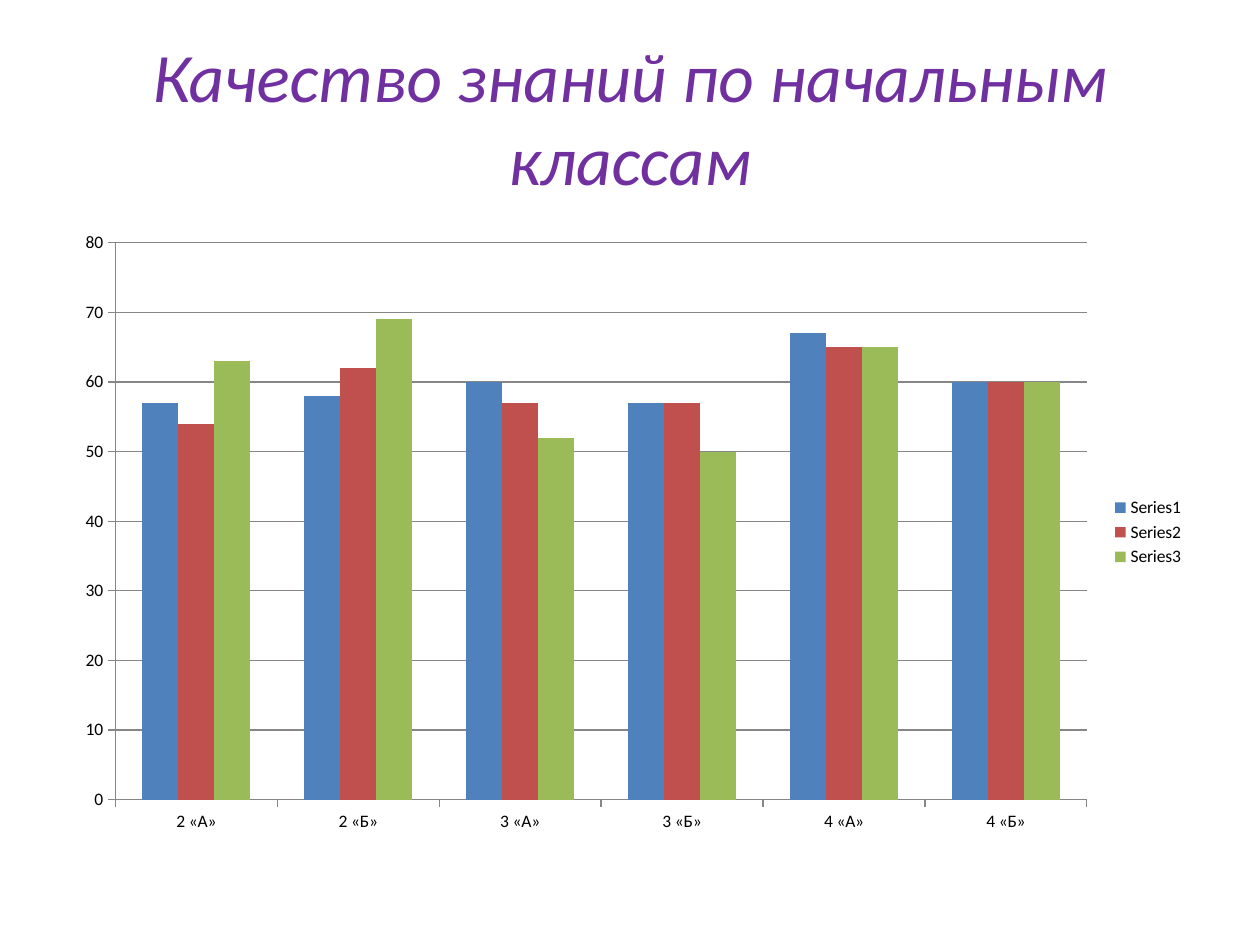
import pptx
import pptx.chart.data
import pptx.dml.color
import pptx.enum.chart
import pptx.enum.text
import pptx.util

RGBColor = pptx.dml.color.RGBColor
PURPLE = RGBColor(0x70, 0x30, 0xA0)
BLACK = RGBColor(0x00, 0x00, 0x00)
GRAY = RGBColor(0x86, 0x86, 0x86)
BLUE = RGBColor(0x4F, 0x81, 0xBD)
RED = RGBColor(0xC0, 0x50, 0x4D)
GREEN = RGBColor(0x9B, 0xBB, 0x59)

FONT = "Calibri"
WIDTH, HEIGHT = pptx.util.Inches(10), pptx.util.Inches(7.5)

CLASSES = ["2 «А»", "2 «Б»", "3 «А»", "3 «Б»", "4 «А»", "4 «Б»"]
SERIES = [
    ("Series1", BLUE, [57, 58, 60, 57, 67, 60]),
    ("Series2", RED, [54, 62, 57, 57, 65, 60]),
    ("Series3", GREEN, [63, 69, 52, 50, 65, 60]),
]


def place(left, top, width, height):
    """Turn shares of the slide's size into lengths."""
    return (int(WIDTH * left), int(HEIGHT * top),
            int(WIDTH * width), int(HEIGHT * height))


def style_font(font, size, color):
    font.name = FONT
    font.size = pptx.util.Pt(size)
    font.color.rgb = color


def add_title(page, text, area):
    frame = page.shapes.add_textbox(*area).text_frame
    frame.word_wrap = True
    frame.vertical_anchor = pptx.enum.text.MSO_ANCHOR.MIDDLE
    frame.text = text
    para = frame.paragraphs[0]
    para.alignment = pptx.enum.text.PP_ALIGN.CENTER
    span = para.runs[0]
    style_font(span.font, 39.6, PURPLE)
    span.font.italic = True


def style_axis(axis):
    axis.major_tick_mark = pptx.enum.chart.XL_TICK_MARK.OUTSIDE
    axis.minor_tick_mark = pptx.enum.chart.XL_TICK_MARK.NONE
    axis.format.line.color.rgb = GRAY
    axis.format.line.width = pptx.util.Pt(0.75)


def add_column_chart(page, area):
    data = pptx.chart.data.CategoryChartData()
    data.categories = CLASSES
    for name, _, values in SERIES:
        data.add_series(name, values)
    chart = page.shapes.add_chart(
        pptx.enum.chart.XL_CHART_TYPE.COLUMN_CLUSTERED, *area, data).chart
    chart.has_title = False
    style_font(chart.font, 10, BLACK)

    # Columns
    plot = chart.plots[0]
    plot.gap_width = 150
    plot.overlap = 0
    plot.vary_by_categories = False
    for series, (_, color, _) in zip(plot.series, SERIES):
        series.format.fill.solid()
        series.format.fill.fore_color.rgb = color

    # Axes and gridlines
    style_axis(chart.category_axis)
    scale = chart.value_axis
    style_axis(scale)
    scale.minimum_scale, scale.maximum_scale, scale.major_unit = 0, 80, 10
    scale.has_major_gridlines = True
    scale.major_gridlines.format.line.color.rgb = GRAY
    scale.major_gridlines.format.line.width = pptx.util.Pt(0.75)

    # Legend
    chart.has_legend = True
    chart.legend.position = pptx.enum.chart.XL_LEGEND_POSITION.RIGHT
    chart.legend.include_in_layout = False


def main():
    deck = pptx.Presentation()
    deck.slide_width, deck.slide_height = WIDTH, HEIGHT
    page = deck.slides.add_slide(deck.slide_layouts[6])
    add_title(page, "Качество знаний по начальным классам",
              place(0.05, 0.04, 0.9, 1 / 6))
    add_column_chart(page, place(0.05, 7 / 30, 0.9, 0.66))
    deck.save("out.pptx")


if __name__ == "__main__":
    main()
